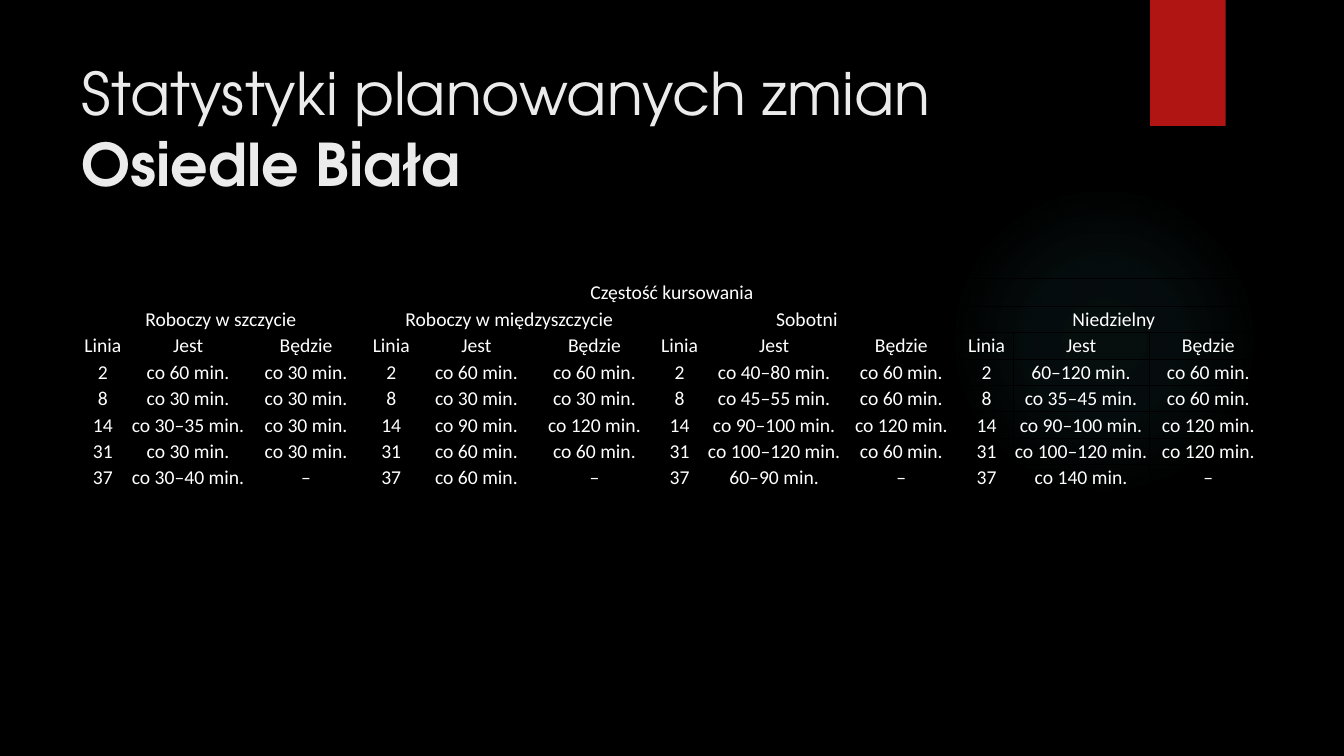
from dataclasses import dataclass

from lxml import etree
from pptx import Presentation
from pptx.dml.color import RGBColor
from pptx.enum.shapes import MSO_SHAPE
from pptx.enum.text import MSO_ANCHOR, MSO_AUTO_SIZE, PP_ALIGN
from pptx.oxml import parse_xml
from pptx.oxml.ns import nsdecls, qn
from pptx.shapes.autoshape import Shape
from pptx.slide import Slide
from pptx.table import Table, _Cell
from pptx.util import Pt

OVAL, RECTANGLE = MSO_SHAPE.OVAL, MSO_SHAPE.RECTANGLE
MIDDLE, NO_AUTOFIT = MSO_ANCHOR.MIDDLE, MSO_AUTO_SIZE.NONE
LEFT, CENTER = PP_ALIGN.LEFT, PP_ALIGN.CENTER

BLACK = RGBColor(0x00, 0x00, 0x00)
WHITE = RGBColor(0xFF, 0xFF, 0xFF)
OFF_WHITE = RGBColor(0xEB, 0xEB, 0xEB)
RED = RGBColor(0xB0, 0x15, 0x13)
ORANGE = RGBColor(0xDD, 0x37, 0x1A)
TEAL = RGBColor(0x50, 0xB9, 0xC1)

TITLE_FONT, TABLE_FONT = "TeX Gyre Adventor", "Calibri"
THICK, THIN = Pt(1), Pt(0.5)
LINE_WIDTH, FREQUENCY_WIDTH, WIDE_FREQUENCY_WIDTH = 37.5, 84.3, 97.5
TOP_ROW_HEIGHT, ROW_HEIGHT = 20, 18.85
GLOW_STOPS = ((0, 7), (36, 6), (69, 0))  # position and opacity, in percent

BUS_LINES = ("2", "8", "14", "31", "37")
COLUMN_HEADINGS = ("Linia", "Jest", "Będzie")
SPAN = len(COLUMN_HEADINGS)


@dataclass(frozen=True)
class DayType:
    heading: str
    current: tuple[str, ...]
    planned: tuple[str, ...]
    current_width: float = FREQUENCY_WIDTH

    @property
    def widths(self) -> tuple[float, ...]:
        return LINE_WIDTH, self.current_width, FREQUENCY_WIDTH

    @property
    def rows(self) -> list[tuple[str, ...]]:
        return [COLUMN_HEADINGS, *zip(BUS_LINES, self.current, self.planned)]


DAY_TYPES = (
    DayType(
        "Roboczy w szczycie",
        ("co 60 min.", "co 30 min.", "co 30–35 min.", "co 30 min.", "co 30–40 min."),
        ("co 30 min.", "co 30 min.", "co 30 min.", "co 30 min.", "–"),
    ),
    DayType(
        "Roboczy w międzyszczycie",
        ("co 60 min.", "co 30 min.", "co 90 min.", "co 60 min.", "co 60 min."),
        ("co 60 min.", "co 30 min.", "co 120 min.", "co 60 min.", "–"),
    ),
    DayType(
        "Sobotni",
        ("co 40–80 min.", "co 45–55 min.", "co 90–100 min.", "co 100–120 min.", "60–90 min."),
        ("co 60 min.", "co 60 min.", "co 120 min.", "co 60 min.", "–"),
        WIDE_FREQUENCY_WIDTH,
    ),
    DayType(
        "Niedzielny",
        ("60–120 min.", "co 35–45 min.", "co 90–100 min.", "co 100–120 min.", "co 140 min."),
        ("co 60 min.", "co 60 min.", "co 120 min.", "co 120 min.", "–"),
        WIDE_FREQUENCY_WIDTH,
    ),
)


def add_glow(slide: Slide) -> None:
    """Add the faint round light behind the table."""
    glow = slide.shapes.add_shape(OVAL, Pt(677.5), Pt(131.8), Pt(221.8), Pt(221.8))
    glow.shadow.inherit = False
    glow.line.fill.background()
    stops = "".join(
        f'<a:gs pos="{position * 1000}"><a:srgbClr val="{TEAL}">'
        f'<a:alpha val="{opacity * 1000}"/></a:srgbClr></a:gs>'
        for position, opacity in GLOW_STOPS
    )
    gradient = parse_xml(
        f'<a:gradFill {nsdecls("a")}><a:gsLst>{stops}</a:gsLst><a:path path="circle">'
        '<a:fillToRect l="50000" t="50000" r="50000" b="50000"/></a:path></a:gradFill>'
    )
    glow.fill.background()
    no_fill = glow._element.spPr.find(qn("a:noFill"))
    glow._element.spPr.replace(no_fill, gradient)


def add_ribbon(slide: Slide) -> None:
    ribbon = slide.shapes.add_shape(RECTANGLE, Pt(821.5), Pt(0), Pt(54), Pt(90))
    ribbon.shadow.inherit = False
    ribbon.fill.solid()
    ribbon.fill.fore_color.rgb = RED
    ribbon.line.fill.background()


def outline_xml(tag: str, width: int, color: RGBColor) -> etree._Element:
    return parse_xml(
        f'<a:{tag} {nsdecls("a")} w="{width}"><a:solidFill>'
        f'<a:srgbClr val="{color}"/></a:solidFill></a:{tag}>'
    )


def fill_title(title: Shape) -> None:
    title.left, title.top, title.width, title.height = Pt(51), Pt(36), Pt(741), Pt(110)
    frame = title.text_frame
    frame.text = "Statystyki planowanych zmian\vOsiedle Biała"
    frame.word_wrap = True
    frame.auto_size = NO_AUTOFIT
    frame.vertical_anchor = MIDDLE
    heading = frame.paragraphs[0]
    heading.alignment = LEFT
    for run in heading.runs:
        run.font.name = TITLE_FONT
        run.font.size = Pt(42)
        run.font.color.rgb = OFF_WHITE
    district = heading.runs[-1]
    district.font.bold = True
    district.font._element.insert(0, outline_xml("ln", Pt(0.75), ORANGE))


def set_cell(cell: _Cell, text: str, left: int, right: int, top: int, bottom: int) -> None:
    """Write a centred cell with the given border widths and no fill."""
    properties = cell._tc.get_or_add_tcPr()
    for tag, width in (("lnL", left), ("lnR", right), ("lnT", top), ("lnB", bottom)):
        properties.append(outline_xml(tag, width, BLACK))
    cell.fill.background()
    cell.margin_left = cell.margin_right = cell.margin_top = Pt(0.75)
    cell.margin_bottom = Pt(0)
    cell.vertical_anchor = MIDDLE
    cell.text = text
    entry = cell.text_frame.paragraphs[0]
    entry.alignment = CENTER
    entry.font.size = Pt(14)
    for run in entry.runs:
        run.font.name = TABLE_FONT
        run.font.size = Pt(14)
        run.font.color.rgb = WHITE


def fill_day(table: Table, day: DayType, first: int) -> None:
    """Fill the three columns of one day type, starting at column first."""
    for offset, width in enumerate(day.widths):
        table.columns[first + offset].width = Pt(width)
        heading = "" if offset else day.heading
        set_cell(table.cell(1, first + offset), heading, THICK, THICK, THICK, THIN)
    table.cell(1, first).merge(table.cell(1, first + SPAN - 1))
    for row, entries in enumerate(day.rows, start=2):
        for offset, entry in enumerate(entries):
            left = THICK if offset == 0 else THIN
            right = THICK if offset == SPAN - 1 else THIN
            set_cell(table.cell(row, first + offset), entry, left, right, THIN, THIN)


def add_timetable(slide: Slide) -> None:
    row_count, column_count = len(BUS_LINES) + 3, len(DAY_TYPES) * SPAN
    width = sum(sum(day.widths) for day in DAY_TYPES)
    height = TOP_ROW_HEIGHT + ROW_HEIGHT * (row_count - 1)
    table = slide.shapes.add_table(
        row_count, column_count, Pt(54.7), Pt(198.7), Pt(width), Pt(height)
    ).table
    table.first_row = table.horz_banding = False
    for index, row in enumerate(table.rows):
        row.height = Pt(ROW_HEIGHT if index else TOP_ROW_HEIGHT)
    for column in range(column_count):
        heading = "" if column else "Częstość kursowania"
        set_cell(table.cell(0, column), heading, THICK, THICK, THICK, THICK)
    table.cell(0, 0).merge(table.cell(0, column_count - 1))
    for index, day in enumerate(DAY_TYPES):
        fill_day(table, day, index * SPAN)


def main() -> None:
    presentation = Presentation()
    presentation.slide_width, presentation.slide_height = Pt(960), Pt(540)
    slide = presentation.slides.add_slide(presentation.slide_layouts[5])
    slide.background.fill.solid()
    slide.background.fill.fore_color.rgb = BLACK
    add_glow(slide)
    add_ribbon(slide)
    fill_title(slide.shapes.title)
    add_timetable(slide)
    presentation.save("out.pptx")


if __name__ == "__main__":
    main()
